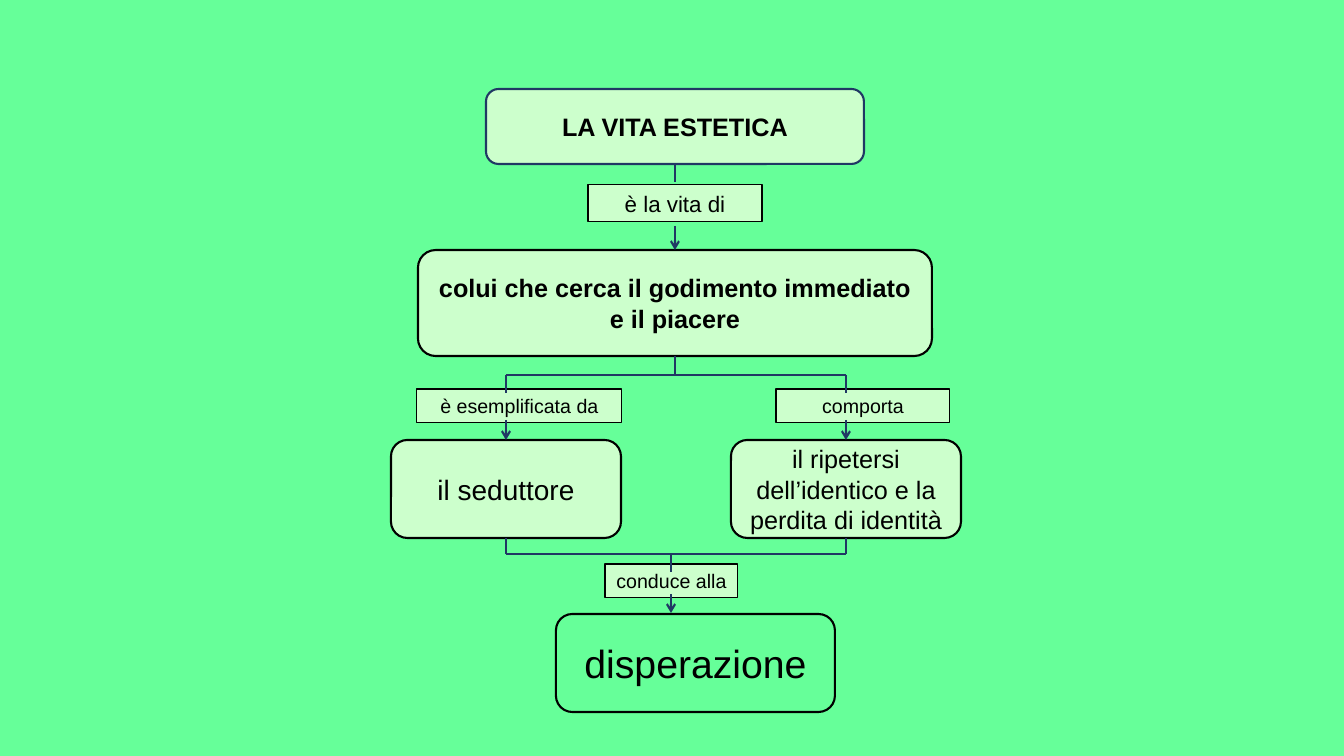
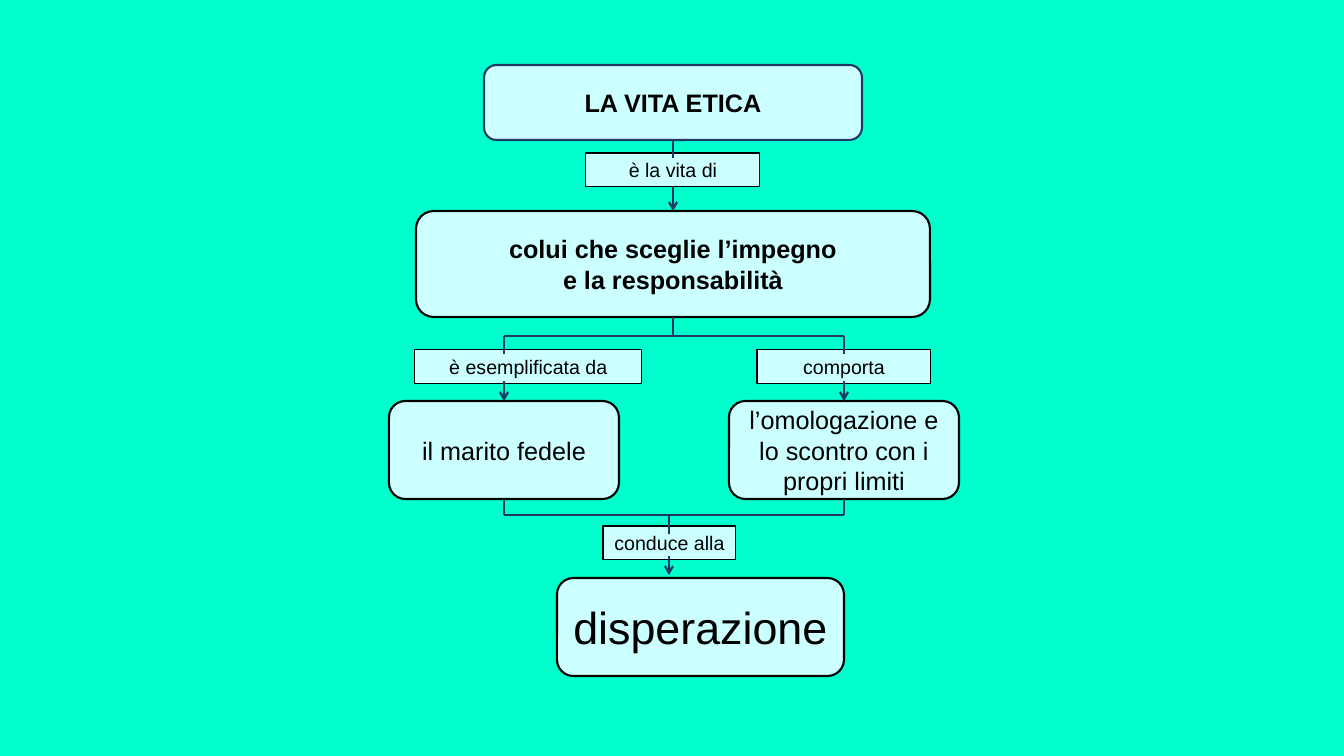
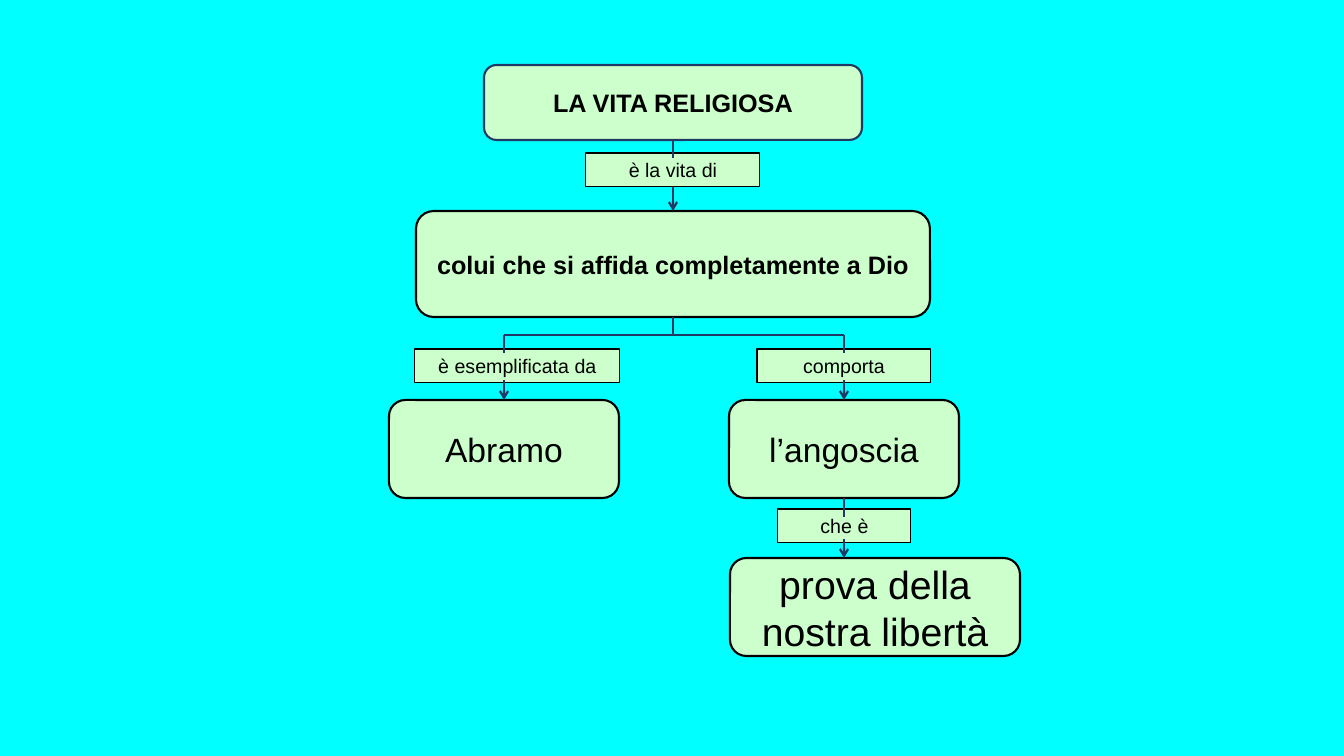
from dataclasses import dataclass

from lxml import etree
from pptx import Presentation
from pptx import util as u
from pptx.dml.color import RGBColor
from pptx.enum import shapes, text
from pptx.oxml.ns import qn

EMU_PER_PX = 914400 / 100.8
FONT = "Arial"
COLOURS = {
    "ink": "000000",
    "link": "203864",
    "green": "66FF99",
    "teal": "00FFCC",
    "cyan": "00FFFF",
    "pale green": "CCFFCC",
    "pale cyan": "CCFFFF",
}
TOP, BOTTOM = 0, 2

TITLE_W, TITLE_H = 378, 75
SEEKER_W, SEEKER_H = 514, 106
BRANCH_W, BRANCH_H = 230, 98
LABEL_W, LABEL_H = 174, 34
OUTCOME_LABEL_W = 133
STUB = 18  # line that leaves a box or bar towards a label
EXAMPLE_DX, CONSEQUENCE_DX, MERGE_DX = -169, 171, -4


@dataclass(frozen=True)
class Node:
    """Text with its size and the place of its box."""
    words: str
    size: int
    x: int = 0
    y: int = 0
    w: int = 0
    h: int = LABEL_H


@dataclass(frozen=True)
class Life:
    background: str
    fill: str
    axis: int
    title: str
    title_y: int
    entry: Node
    seeker: str
    seeker_y: int
    branch_y: int
    example_label: Node
    consequence_label_x: int
    example: Node
    consequence: Node
    merges: bool
    outcome_label: str
    outcome_label_y: int
    outcome: Node
    outcome_fill: str


def px(length: float) -> int:
    return u.Emu(round(length * EMU_PER_PX))


def rgb(name: str) -> RGBColor:
    return RGBColor.from_string(COLOURS[name])


def write(frame, words: str, *, size: int, bold: bool = False) -> None:
    frame.word_wrap = True
    frame.vertical_anchor = text.MSO_ANCHOR.MIDDLE
    for number, line in enumerate(words.split("\n")):
        paragraph = frame.add_paragraph() if number else frame.paragraphs[0]
        paragraph.alignment = text.PP_ALIGN.CENTER
        run = paragraph.add_run()
        run.text = line
        run.font.name, run.font.size, run.font.bold = FONT, u.Pt(size), bold
        run.font.color.rgb = rgb("ink")


def box(slide, node: Node, fill: str, *, rounded: bool = True,
        border: str = "ink", bold: bool = False):
    kind = shapes.MSO_SHAPE.ROUNDED_RECTANGLE if rounded else shapes.MSO_SHAPE.RECTANGLE
    shape = slide.shapes.add_shape(kind, px(node.x), px(node.y), px(node.w), px(node.h))
    shape.shadow.inherit = False
    shape.fill.solid()
    shape.fill.fore_color.rgb = rgb(fill)
    shape.line.color.rgb = rgb(border)
    shape.line.width = u.Pt(1.5 if rounded else 0.75)
    write(shape.text_frame, node.words, size=node.size, bold=bold)
    return shape


def centred(words: str, size: int, x: int, y: int, w: int, h: int = LABEL_H) -> Node:
    return Node(words, size, x - w // 2, y, w, h)


def link(slide, x1: int, y1: int, x2: int, y2: int, *,
         source=None, target=None, arrow: bool = False) -> None:
    """Line that may leave the bottom of source and meet the top of target."""
    line = slide.shapes.add_connector(
        shapes.MSO_CONNECTOR.STRAIGHT, px(x1), px(y1), px(x2), px(y2))
    line.line.color.rgb = rgb("link")
    line.line.width = u.Pt(1.5)
    if arrow:
        etree.SubElement(line.line._get_or_add_ln(), qn("a:tailEnd"), type="arrow")
    etree.SubElement(line._element.spPr, qn("a:effectLst"))
    if source is not None:
        line.begin_connect(source, BOTTOM)
    if target is not None:
        line.end_connect(target, TOP)


def draw_life(deck, life: Life) -> None:
    slide = deck.slides.add_slide(deck.slide_layouts[6])
    slide.background.fill.solid()
    slide.background.fill.fore_color.rgb = rgb(life.background)
    axis, branch_y = life.axis, life.branch_y
    example_x, consequence_x = axis + EXAMPLE_DX, axis + CONSEQUENCE_DX
    branch_end = branch_y + BRANCH_H

    title = box(slide, centred(life.title, 18, axis, life.title_y, TITLE_W, TITLE_H),
                life.fill, border="link", bold=True)
    seeker = box(slide, centred(life.seeker, 18, axis, life.seeker_y, SEEKER_W, SEEKER_H),
                 life.fill, bold=True)
    branches = [
        (x, box(slide, centred(node.words, node.size, x, branch_y, BRANCH_W, BRANCH_H),
                life.fill))
        for x, node in ((example_x, life.example), (consequence_x, life.consequence))
    ]
    box(slide, life.outcome, life.outcome_fill)

    outcome_x = axis + MERGE_DX if life.merges else consequence_x
    label_y = branch_y - 51
    for label in (
        centred(life.entry.words, life.entry.size, axis, life.entry.y, LABEL_W, life.entry.h),
        Node(life.example_label.words, 14, life.example_label.x, label_y, life.example_label.w),
        Node("comporta", 14, life.consequence_label_x, label_y, LABEL_W),
        centred(life.outcome_label, 14, outcome_x, life.outcome_label_y, OUTCOME_LABEL_W),
    ):
        box(slide, label, life.fill, rounded=False)

    title_end = life.title_y + TITLE_H
    link(slide, axis, title_end, axis, title_end + STUB, source=title)
    link(slide, axis, life.seeker_y - 24, axis, life.seeker_y, target=seeker, arrow=True)

    fork_y = branch_y - 65
    link(slide, axis, life.seeker_y + SEEKER_H, axis, fork_y, source=seeker)
    link(slide, example_x, fork_y, consequence_x, fork_y)
    for x, branch in branches:
        link(slide, x, fork_y, x, fork_y + STUB)
        link(slide, x, branch_y - 20, x, branch_y, target=branch, arrow=True)

    stub_end = life.outcome_label_y + 8
    if life.merges:
        merge_y = branch_end + 16
        for x, branch in branches:
            link(slide, x, branch_end, x, merge_y, source=branch)
        link(slide, example_x, merge_y, consequence_x, merge_y)
        link(slide, outcome_x, merge_y, outcome_x, stub_end)
    else:
        link(slide, outcome_x, branch_end, outcome_x, stub_end, source=branches[1][1])
    link(slide, outcome_x, life.outcome_label_y + 30, outcome_x,
         life.outcome_label_y + 49, arrow=True)


LIVES = [
    Life(
        background="green", fill="pale green", axis=675,
        title="LA VITA ESTETICA", title_y=89,
        entry=Node("è la vita di", 16, y=185, h=37),
        seeker="colui che cerca il godimento immediato\ne il piacere", seeker_y=250,
        branch_y=440,
        example_label=Node("è esemplificata da", 14, x=417, w=205),
        consequence_label_x=776,
        example=Node("il seduttore", 20),
        consequence=Node("il ripetersi dell’identico e la perdita di identità", 18),
        merges=True, outcome_label="conduce alla", outcome_label_y=564,
        outcome=Node("disperazione", 28, 556, 614, 279, 98), outcome_fill="green",
    ),
    Life(
        background="teal", fill="pale cyan", axis=673,
        title="LA VITA ETICA", title_y=65,
        entry=Node("è la vita di", 14, y=153),
        seeker="colui che sceglie l’impegno\ne la responsabilità", seeker_y=211,
        branch_y=401,
        example_label=Node("è esemplificata da", 14, x=415, w=227),
        consequence_label_x=757,
        example=Node("il marito fedele", 18),
        consequence=Node("l’omologazione e lo scontro con i propri limiti", 18),
        merges=True, outcome_label="conduce alla", outcome_label_y=526,
        outcome=Node("disperazione", 32, 557, 578, 287, 98), outcome_fill="pale cyan",
    ),
    Life(
        background="cyan", fill="pale green", axis=673,
        title="LA VITA RELIGIOSA", title_y=65,
        entry=Node("è la vita di", 14, y=153),
        seeker="colui che si affida completamente a Dio", seeker_y=211,
        branch_y=400,
        example_label=Node("è esemplificata da", 14, x=415, w=205),
        consequence_label_x=757,
        example=Node("Abramo", 24),
        consequence=Node("l’angoscia", 24),
        merges=False, outcome_label="che è", outcome_label_y=509,
        outcome=Node("prova della nostra libertà", 28, 730, 558, 290, 98),
        outcome_fill="pale green",
    ),
]


def main() -> None:
    deck = Presentation()
    deck.slide_width, deck.slide_height = px(1344), px(756)
    for life in LIVES:
        draw_life(deck, life)
    deck.save("out.pptx")


if __name__ == "__main__":
    main()
